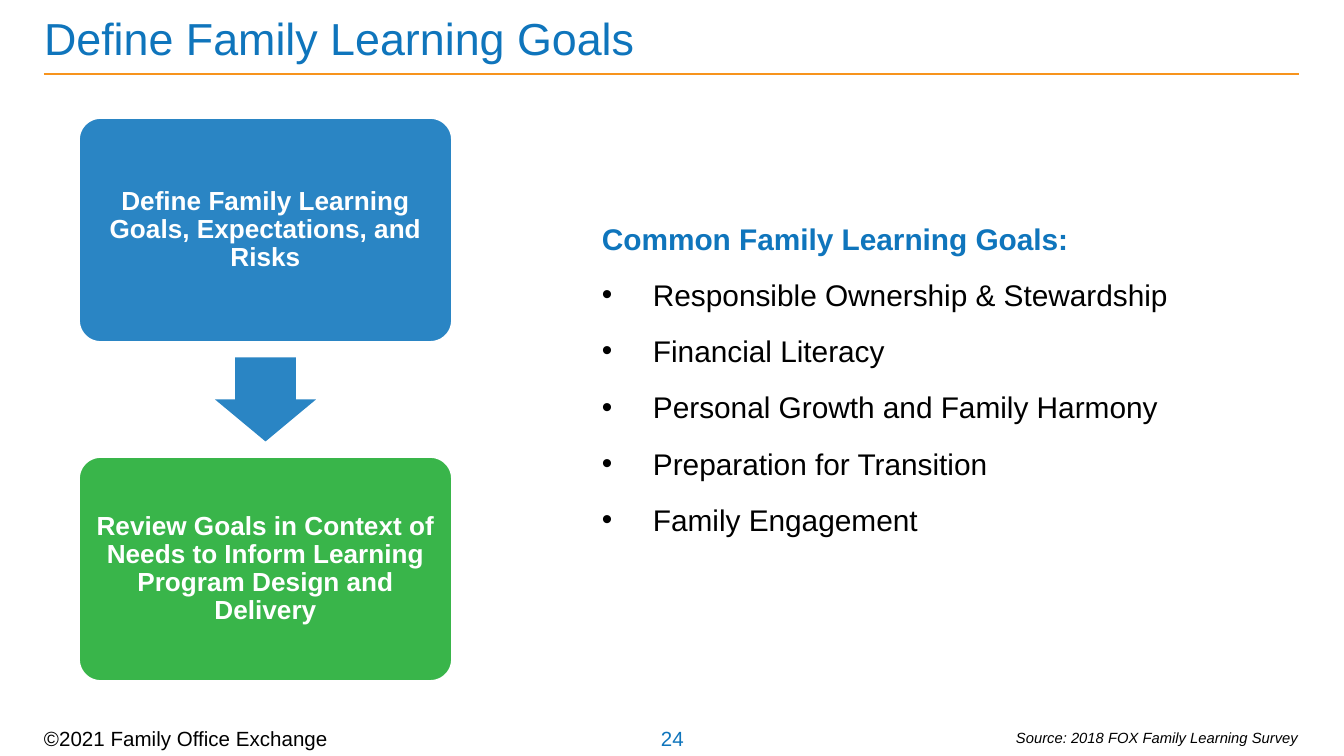
from pptx import Presentation
from pptx.dml.color import RGBColor
from pptx.enum.shapes import MSO_CONNECTOR, MSO_SHAPE
from pptx.enum.text import MSO_ANCHOR, MSO_AUTO_SIZE, PP_ALIGN
from pptx.oxml.ns import qn
from pptx.util import Emu, Pt
from lxml.etree import SubElement

BLUE = RGBColor(0x0F, 0x75, 0xBC)
BOX_BLUE = RGBColor(0x2A, 0x85, 0xC4)
GREEN = RGBColor(0x39, 0xB5, 0x4A)
ORANGE = RGBColor(0xF7, 0x94, 0x1D)
WHITE = RGBColor(0xFF, 0xFF, 0xFF)
BLACK = RGBColor(0, 0, 0)

EMU_PER_PX = 914400 / 134.4
BOX_LEFT, BOX_TOP, BOX_WIDTH, BOX_HEIGHT, BOX_STEP = 78, 117, 375, 226, 339
ARROW_LENGTH, ARROW_WIDTH = 84, 101

STEPS = [
    ("Define Family Learning Goals, Expectations, and Risks", BOX_BLUE),
    ("Review Goals in Context of Needs to Inform Learning Program Design and Delivery", GREEN),
]
GOALS = [
    "Responsible Ownership & Stewardship",
    "Financial Literacy",
    "Personal Growth and Family Harmony",
    "Preparation for Transition",
    "Family Engagement",
]


def px(length):
    return Emu(round(length * EMU_PER_PX))


def set_frame(frame, insets, anchor=MSO_ANCHOR.MIDDLE, wrap=True):
    frame.auto_size = MSO_AUTO_SIZE.NONE
    frame.word_wrap = wrap
    frame.vertical_anchor = anchor
    frame.margin_left, frame.margin_top, frame.margin_right, frame.margin_bottom = map(px, insets)


def write(paragraph, text, size, color, bold=False, italic=False, align=PP_ALIGN.LEFT,
          line_spacing=None, space_after=None, indent=0, bullet=None):
    paragraph.alignment = align
    paragraph.line_spacing = line_spacing
    paragraph.space_after = space_after
    properties = paragraph._p.get_or_add_pPr()
    if indent:
        properties.set("marL", str(px(indent)))
        properties.set("indent", str(-px(indent)))
    if bullet:
        SubElement(properties, qn("a:buFont"), typeface="Arial")
        SubElement(properties, qn("a:buChar"), char=bullet)
    run = paragraph.add_run()
    run.text = text
    font = run.font
    font.name, font.size, font.bold, font.italic = "Arial", Pt(size), bold, italic
    font.color.rgb = color


def add_title(slide, text):
    title = slide.shapes.title
    title.left, title.top, title.width, title.height = map(px, (44, 5, 1089, 65))
    set_frame(title.text_frame, (0, 7, 13, 7))
    write(title.text_frame.paragraphs[0], text, 24, BLUE)


def add_rule(slide):
    rule = slide.shapes.add_connector(MSO_CONNECTOR.STRAIGHT, px(44), px(74), px(1299), px(74))
    rule.line.color.rgb = ORANGE
    rule.line.width = Pt(1)
    SubElement(rule._element.spPr, qn("a:effectLst"))


def add_text_box(slide, bounds, insets=(0, 0, 0, 0), **frame_format):
    frame = slide.shapes.add_textbox(*map(px, bounds)).text_frame
    set_frame(frame, insets, **frame_format)
    return frame


def add_filled_shape(slide, kind, bounds, fill, adjustments):
    shape = slide.shapes.add_shape(kind, *map(px, bounds))
    shape.shadow.inherit = False
    shape.fill.solid()
    shape.fill.fore_color.rgb = fill
    shape.line.fill.background()
    for index, value in enumerate(adjustments):
        shape.adjustments[index] = value
    return shape


def add_step(slide, text, top, fill):
    bounds = (BOX_LEFT, top, BOX_WIDTH, BOX_HEIGHT)
    box = add_filled_shape(slide, MSO_SHAPE.ROUNDED_RECTANGLE, bounds, fill, [0.1])
    box.line.color.rgb = WHITE
    box.line.width = Pt(2)
    set_frame(box.text_frame, (8, 8, 8, 8))
    write(box.text_frame.paragraphs[0], text, 14, WHITE, bold=True,
          align=PP_ALIGN.CENTER, line_spacing=0.9)


def add_down_arrow(slide):
    center_x = BOX_LEFT + BOX_WIDTH / 2
    center_y = BOX_TOP + (BOX_HEIGHT + BOX_STEP) / 2
    bounds = (center_x - ARROW_LENGTH / 2, center_y - ARROW_WIDTH / 2, ARROW_LENGTH, ARROW_WIDTH)
    arrow = add_filled_shape(slide, MSO_SHAPE.RIGHT_ARROW, bounds, BOX_BLUE, [0.6, 0.5])
    arrow.rotation = 90


def add_goals(slide):
    frame = add_text_box(slide, (589, 210, 652, 336), (13, 7, 13, 7), anchor=MSO_ANCHOR.TOP)
    spacing = {"line_spacing": 1.1, "space_after": Pt(9), "indent": 51}
    write(frame.paragraphs[0], "Common Family Learning Goals:", 16, BLUE, bold=True, **spacing)
    for goal in GOALS:
        write(frame.add_paragraph(), goal, 16, BLACK, bullet="•", **spacing)


def add_footer(slide):
    number = add_text_box(slide, (660, 726, 25, 25), wrap=False)
    write(number.paragraphs[0], "24", 11, BLUE, align=PP_ALIGN.CENTER)
    copyright_line = add_text_box(slide, (44, 730, 336, 17), wrap=False)
    write(copyright_line.paragraphs[0], "©2021 Family Office Exchange", 11, BLACK)
    source = add_text_box(slide, (1003, 723, 341, 31), (13, 7, 13, 7), anchor=MSO_ANCHOR.BOTTOM)
    write(source.paragraphs[0], "Source: 2018 FOX Family Learning Survey", 7.9, BLACK, italic=True)


def main():
    presentation = Presentation()
    presentation.slide_width, presentation.slide_height = px(1344), px(756)
    slide = presentation.slides.add_slide(presentation.slide_layouts[5])
    add_rule(slide)
    add_title(slide, "Define Family Learning Goals")
    for index, (text, fill) in enumerate(STEPS):
        add_step(slide, text, BOX_TOP + index * BOX_STEP, fill)
    add_down_arrow(slide)
    add_goals(slide)
    add_footer(slide)
    presentation.save("out.pptx")


if __name__ == "__main__":
    main()
